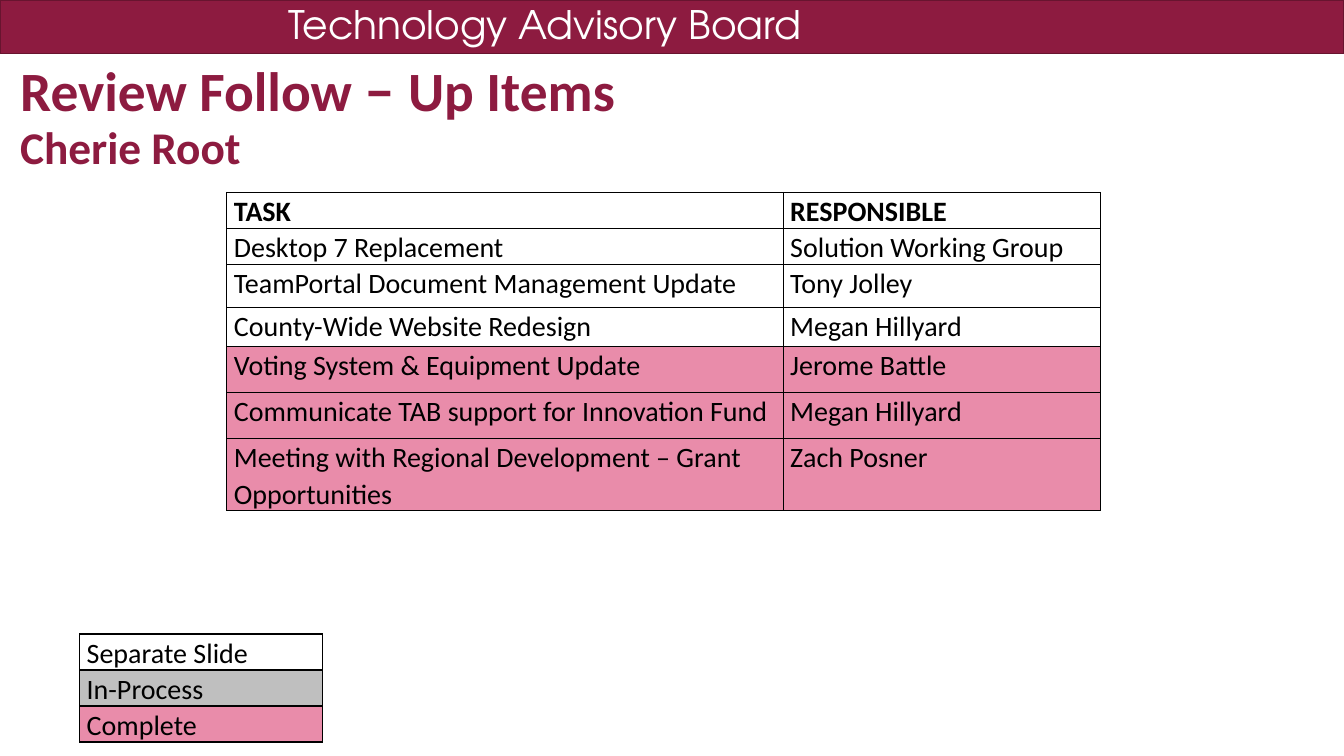
from lxml.etree import SubElement
from pptx import Presentation
from pptx.dml.color import RGBColor
from pptx.enum.shapes import MSO_SHAPE
from pptx.enum.text import MSO_ANCHOR, MSO_AUTO_SIZE
from pptx.oxml.ns import qn
from pptx.util import Inches, Pt

MAROON = RGBColor(0x8D, 0x1B, 0x40)
DARK_MAROON = RGBColor(0x68, 0x14, 0x2F)
PINK = RGBColor(0xE9, 0x8C, 0xAA)
GRAY = RGBColor(0xBF, 0xBF, 0xBF)
WHITE = RGBColor(0xFF, 0xFF, 0xFF)
BLACK = RGBColor(0, 0, 0)

# Grid of 160 columns by 90 rows, with square cells
COLUMNS = 160
CELL = Inches(1 / 12)
LINE_ROWS = 4.08

TASKS = [
    # task, responsible, rows of the grid, fill
    ("TASK", "RESPONSIBLE", LINE_ROWS, WHITE),
    ("Desktop 7 Replacement", "Solution Working Group", LINE_ROWS, WHITE),
    ("TeamPortal Document Management Update", "Tony Jolley", 5.16, WHITE),
    ("County-Wide Website Redesign", "Megan Hillyard", 4.56, WHITE),
    ("Voting System & Equipment Update", "Jerome Battle", 5.52, PINK),
    ("Communicate TAB support for Innovation Fund", "Megan Hillyard", 5.52, PINK),
    ("Meeting with Regional Development – Grant Opportunities", "Zach Posner", 5.52, PINK),
]
LEGEND = [("Separate Slide", WHITE), ("In-Process", GRAY), ("Complete", PINK)]


def grid(*units):
    return [round(u * CELL) for u in units]


def add_text(p, text, size=20, font="Calibri", color=BLACK, bold=False):
    r = p.add_run()
    r.text = text
    r.font.size = Pt(size)
    r.font.name = font
    r.font.color.rgb = color
    r.font.bold = bold


def add_box(s, *place, margin=None, wrap=True):
    tf = s.shapes.add_textbox(*grid(*place)).text_frame
    tf.word_wrap = wrap
    tf.vertical_anchor = MSO_ANCHOR.TOP
    if margin is not None:
        tf.margin_left = tf.margin_right = tf.margin_top = tf.margin_bottom = margin
    return tf


def add_borders(cell):
    tc_pr = cell._tc.get_or_add_tcPr()
    for side in ("lnL", "lnR", "lnT", "lnB"):
        line = SubElement(tc_pr, qn(f"a:{side}"), w=str(Pt(1)))
        fill = SubElement(line, qn("a:solidFill"))
        SubElement(fill, qn("a:srgbClr"), val=str(BLACK))


def add_table(s, left, top, widths, rows, header=False):
    """Each row is (texts, height, fill)."""
    height = sum(row[1] for row in rows)
    table = s.shapes.add_table(
        len(rows), len(widths), *grid(left, top, sum(widths), height)).table
    table.first_row = header
    table.horz_banding = False
    for column, width in zip(table.columns, grid(*widths)):
        column.width = width
    for i, (texts, row_height, color) in enumerate(rows):
        table.rows[i].height = round(row_height * CELL)
        for j, text in enumerate(texts):
            cell = table.cell(i, j)
            add_borders(cell)
            cell.fill.solid()
            cell.fill.fore_color.rgb = color
            cell.margin_left = cell.margin_right = Inches(0.07)
            cell.margin_top = cell.margin_bottom = 0
            p = cell.text_frame.paragraphs[0]
            p.line_spacing = 1.07
            add_text(p, text, bold=header and i == 0)


def add_banner(s):
    band = s.shapes.add_shape(MSO_SHAPE.RECTANGLE, *grid(0, 0, COLUMNS, 6.36))
    band.shadow.inherit = False
    band.fill.solid()
    band.fill.fore_color.rgb = MAROON
    band.line.color.rgb = DARK_MAROON
    band.line.width = Pt(1)
    tf = add_box(s, 33.12, -0.6, 64.56, 6.84, wrap=False)
    tf.auto_size = MSO_AUTO_SIZE.SHAPE_TO_FIT_TEXT
    add_text(tf.paragraphs[0], "Technology Advisory Board", size=28,
             font="TeX Gyre Adventor", color=WHITE)


def add_title(s):
    p = add_box(s, 2.4, 6.96, 144, 9, margin=0).paragraphs[0]
    p.line_spacing = 0.9
    for text, size in (("Review Follow ", 39.6), ("–", 44.1), (" Up Items", 39.6)):
        add_text(p, text, size=size, color=MAROON, bold=True)
    p.add_line_break()
    add_text(p, "Cherie Root", size=32.4, color=MAROON, bold=True)


def main():
    prs = Presentation()
    prs.slide_width, prs.slide_height = grid(COLUMNS, 90)
    s = prs.slides.add_slide(prs.slide_layouts[6])

    # Heading
    add_banner(s)
    add_title(s)

    # Follow-up items
    add_table(s, 27, 22.92, (66.24, 37.8),
              [((task, who), height, color) for task, who, height, color in TASKS],
              header=True)

    # Status legend
    add_table(s, 9.48, 75.48, (28.92,),
              [((status,), LINE_ROWS, color) for status, color in LEGEND])

    prs.save("out.pptx")


if __name__ == "__main__":
    main()
